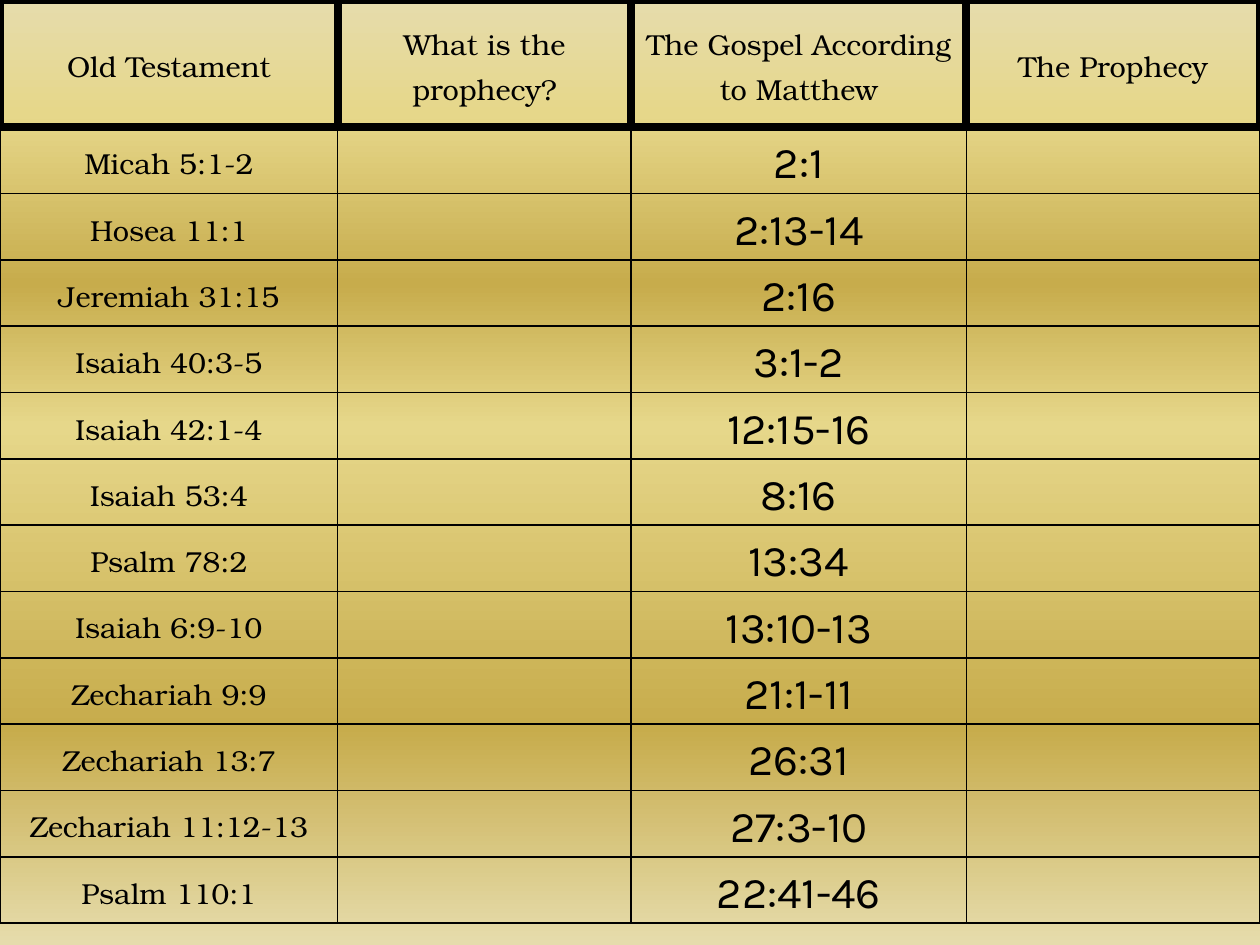
"""Build a slide with a table of Old Testament prophecies and their places in Matthew."""
from lxml.etree import SubElement
from pptx import Presentation
from pptx.dml.color import RGBColor
from pptx.enum.text import MSO_ANCHOR as Anchor, PP_ALIGN as Align
from pptx.oxml.ns import qn
from pptx.util import Inches, Pt

COLORS = {"ink": "000000", "pale": "E6DCAC", "light": "E6D78A", "gold": "C7AC4C"}
GRADIENT = [(0, "pale"), (12, "light"), (30, "gold"), (45, "light"), (77, "gold"), (100, "pale")]
SERIF, SANS = ("TeX Gyre Bonum", 16.5), ("Karla", 25)
THICK, THIN = 5.25, 1
HEADERS = ["Old Testament", "What is the prophecy?", "The Gospel According to Matthew", "The Prophecy"]
PROPHECIES = [
    ("Micah 5:1-2", "2:1"),
    ("Hosea 11:1", "2:13-14"),
    ("Jeremiah 31:15", "2:16"),
    ("Isaiah 40:3-5", "3:1-2"),
    ("Isaiah 42:1-4", "12:15-16"),
    ("Isaiah 53:4", "8:16"),
    ("Psalm 78:2", "13:34"),
    ("Isaiah 6:9-10", "13:10-13"),
    ("Zechariah 9:9", "21:1-11"),
    ("Zechariah 13:7", "26:31"),
    ("Zechariah 11:12-13", "27:3-10"),
    ("Psalm 110:1", "22:41-46"),
]
COLUMN_WIDTHS = [2.68, 2.33, 2.66, 2.33]
HEADER_HEIGHT, TABLE_HEIGHT = 1.01, 7.33
ROW_HEIGHT = (TABLE_HEIGHT - HEADER_HEIGHT) / len(PROPHECIES)


def add_color(parent, name):
    SubElement(parent, qn("a:srgbClr"), val=COLORS[name])


def paint_background(slide):
    slide.background.fill.gradient()
    gradient = slide.element.find(".//" + qn("a:gradFill"))
    stops = gradient.find(qn("a:gsLst"))
    for stop in list(stops):
        stops.remove(stop)
    for position, color in GRADIENT:
        add_color(SubElement(stops, qn("a:gs"), pos=str(position * 1000)), color)
    direction = gradient.find(qn("a:lin"))
    direction.set("ang", str(90 * 60000))
    direction.set("scaled", "0")


def set_borders(cell, row):
    properties = cell._tc.get_or_add_tcPr()
    side_width = THICK if row == 0 else THIN
    top_width = THICK if row <= 1 else THIN
    for side, width in zip("LRTB", (side_width, side_width, top_width, side_width)):
        line = SubElement(properties, qn("a:ln" + side), w=str(Pt(width)))
        add_color(SubElement(line, qn("a:solidFill")), "ink")


def write_text(cell, text, font_name, size):
    cell.vertical_anchor = Anchor.MIDDLE
    cell.margin_left = cell.margin_right = Inches(0.06)
    cell.margin_top = cell.margin_bottom = 0
    paragraph = cell.text_frame.paragraphs[0]
    paragraph.alignment = Align.CENTER
    paragraph.line_spacing = 1.15
    run = paragraph.add_run()
    run.text = text
    run.font.name, run.font.size, run.font.bold = font_name, Pt(size), False
    run.font.color.rgb = RGBColor.from_string(COLORS["ink"])


def add_prophecy_table(slide):
    rows = [HEADERS] + [(source, "", gospel, "") for source, gospel in PROPHECIES]
    frame = slide.shapes.add_table(len(rows), len(HEADERS), 0, 0, Inches(10), Inches(TABLE_HEIGHT))
    table = frame.table
    table.first_row = table.horz_banding = False
    for column, width in zip(table.columns, COLUMN_WIDTHS):
        column.width = Inches(width)
    for row, texts in enumerate(rows):
        table.rows[row].height = Inches(ROW_HEIGHT if row else HEADER_HEIGHT)
        for column, text in enumerate(texts):
            cell = table.cell(row, column)
            set_borders(cell, row)
            cell.fill.background()
            if text:
                write_text(cell, text, *(SANS if row and column == 2 else SERIF))


def main():
    presentation = Presentation()
    presentation.slide_width, presentation.slide_height = Inches(10), Inches(7.5)
    slide = presentation.slides.add_slide(presentation.slide_layouts[6])
    paint_background(slide)
    add_prophecy_table(slide)
    presentation.save("out.pptx")


if __name__ == "__main__":
    main()
